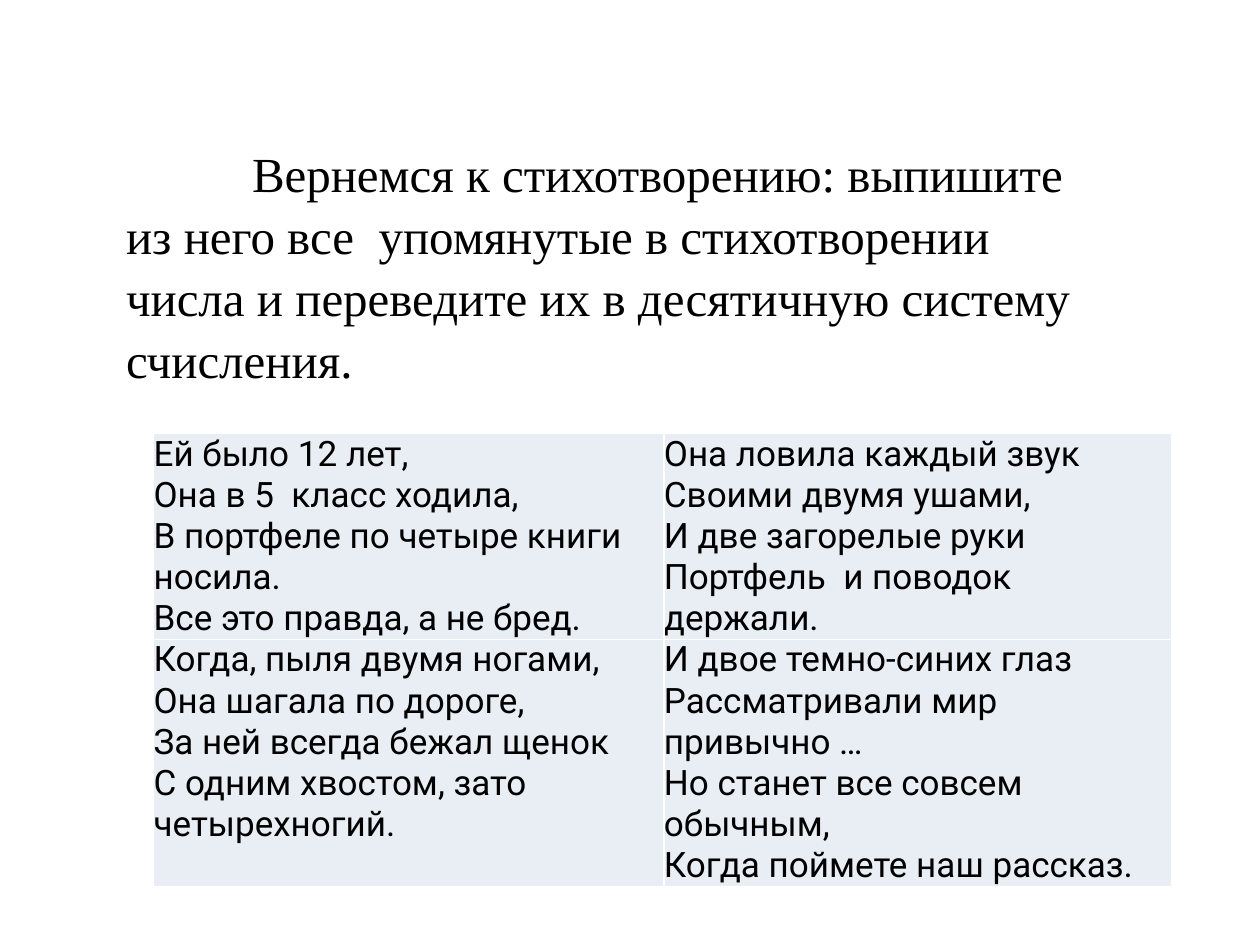
from lxml.etree import SubElement
from pptx import Presentation
from pptx.dml.color import RGBColor
from pptx.enum.text import MSO_ANCHOR, MSO_AUTO_SIZE, PP_ALIGN
from pptx.oxml.ns import qn
from pptx.util import Pt

COLORS = {"text": "000000", "cell": "E9EDF4", "border": "FFFFFF"}
TASK = ("Вернемся к стихотворению: выпишите из него все  упомянутые в стихотворении "
        "числа и переведите их в десятичную систему счисления.")
VERSES = [
    [
        ["Ей было 12 лет,", "Она в 5  класс ходила,",
         "В портфеле по четыре книги носила.", "Все это правда, а не бред."],
        ["Она ловила каждый звук", "Своими двумя ушами,",
         "И две загорелые руки", "Портфель  и поводок держали."],
    ],
    [
        ["Когда, пыля двумя ногами,", "Она шагала по дороге,",
         "За ней всегда бежал щенок", "С одним хвостом, зато четырехногий."],
        ["И двое темно-синих глаз", "Рассматривали мир привычно …",
         "Но станет все совсем обычным,", "Когда поймете наш рассказ."],
    ],
]
COLUMN_WIDTHS = [291.6, 290.2]
ROW_HEIGHT = 67


def add_span(para, text, font, size):
    """Add one formatted run to a paragraph."""
    span = para.add_run()
    span.text = text
    span.font.name = font
    span.font.size = Pt(size)
    span.font.color.rgb = RGBColor.from_string(COLORS["text"])


def add_task(page):
    """Fill the title placeholder with the task, its first line indented."""
    box = page.shapes.title
    box.left, box.top, box.width, box.height = Pt(64.8), Pt(77), Pt(561.6), Pt(177)
    frame = box.text_frame
    frame.word_wrap = True
    frame.auto_size = MSO_AUTO_SIZE.NONE
    frame.vertical_anchor = MSO_ANCHOR.TOP
    para = frame.paragraphs[0]
    para.alignment = PP_ALIGN.LEFT
    para.line_spacing = 1.05
    properties = para._p.get_or_add_pPr()
    properties.set("marL", "0")
    properties.set("indent", str(Pt(72)))
    add_span(para, TASK, "Times New Roman", 28)


def add_borders(cell):
    """Draw a thin line on all four sides of a cell."""
    properties = cell._tc.get_or_add_tcPr()
    for position, side in enumerate(("lnL", "lnR", "lnT", "lnB")):
        line = SubElement(properties, qn(f"a:{side}"), w=str(Pt(1)))
        fill = SubElement(line, qn("a:solidFill"))
        SubElement(fill, qn("a:srgbClr"), val=COLORS["border"])
        properties.insert(position, line)


def fill_cell(cell, lines):
    """Write one verse into a cell and format the cell."""
    cell.margin_left = cell.margin_right = cell.margin_top = cell.margin_bottom = 0
    cell.fill.solid()
    cell.fill.fore_color.rgb = RGBColor.from_string(COLORS["cell"])
    add_borders(cell)
    para = cell.text_frame.paragraphs[0]
    for number, line in enumerate(lines):
        if number:
            para.add_line_break()
        add_span(para, line, "Roboto", 20)


def add_poem(page):
    """Add the table with one verse in each cell."""
    table = page.shapes.add_table(
        len(VERSES), len(COLUMN_WIDTHS), Pt(87.8), Pt(247.7),
        Pt(sum(COLUMN_WIDTHS)), Pt(ROW_HEIGHT * len(VERSES))).table
    table.first_row = table.horz_banding = False
    for column, width in zip(table.columns, COLUMN_WIDTHS):
        column.width = Pt(width)
    for row, verses in enumerate(VERSES):
        for column, lines in enumerate(verses):
            fill_cell(table.cell(row, column), lines)


def main():
    """Build and save the slide."""
    deck = Presentation()
    deck.slide_width, deck.slide_height = Pt(720), Pt(540)
    page = deck.slides.add_slide(deck.slide_layouts[5])
    add_task(page)
    add_poem(page)
    deck.save("out.pptx")


if __name__ == "__main__":
    main()
